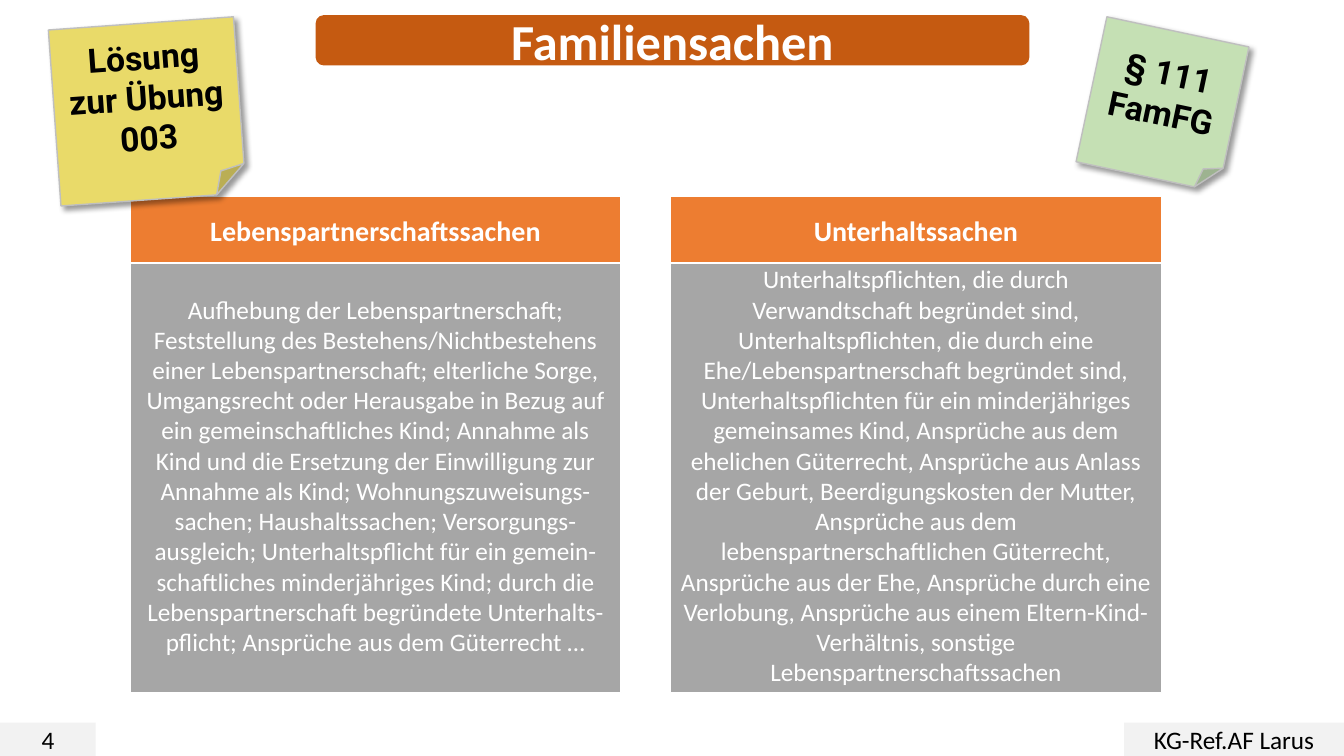
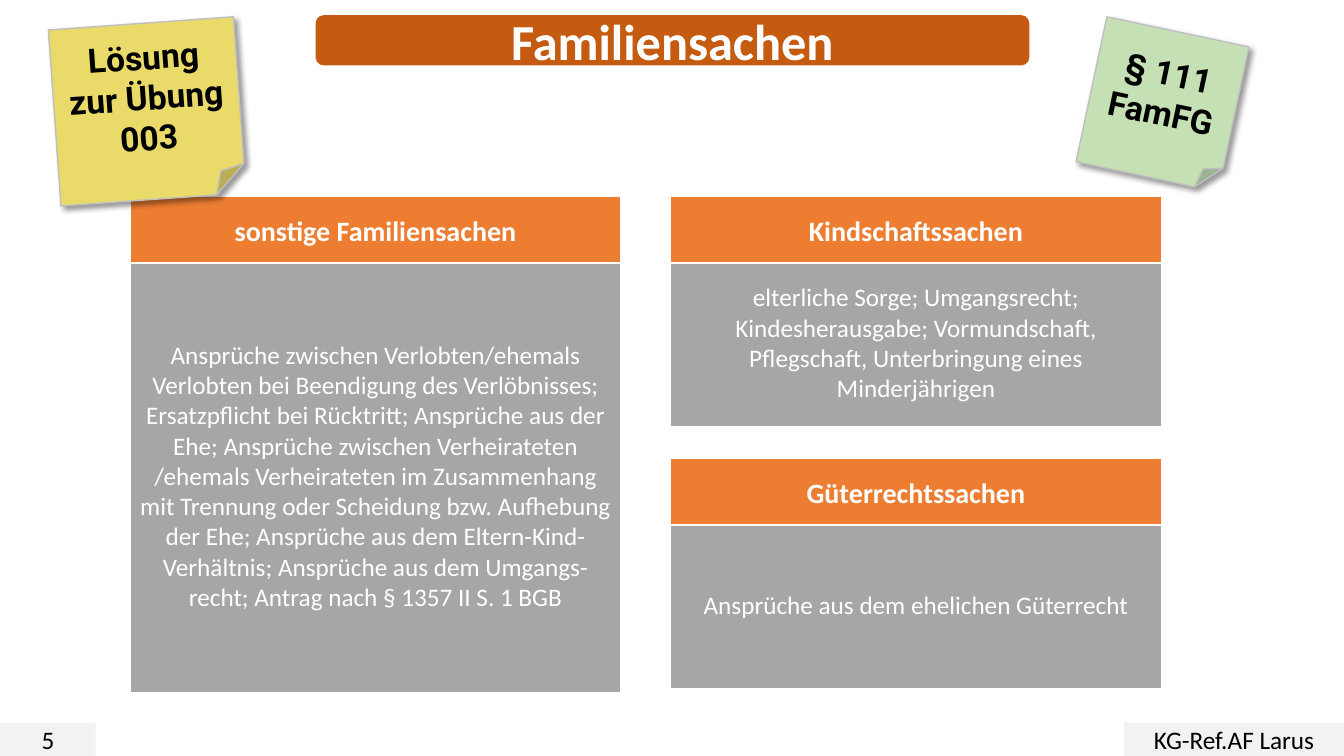
from dataclasses import dataclass

from lxml import etree
from pptx import Presentation
from pptx.dml.color import RGBColor
from pptx.enum.shapes import MSO_SHAPE
from pptx.enum.text import MSO_ANCHOR, PP_ALIGN
from pptx.oxml.ns import qn
from pptx.util import Inches, Pt

RECT = MSO_SHAPE.RECTANGLE
ROUND = MSO_SHAPE.ROUNDED_RECTANGLE
FOLD = MSO_SHAPE.FOLDED_CORNER
MIDDLE = MSO_ANCHOR.MIDDLE
CENTER = PP_ALIGN.CENTER

COLORS = {
    "title": "C55A11",
    "head": "ED7D31",
    "body": "A6A6A6",
    "foot": "F2F2F2",
    "yellow": "E9DA69",
    "green": "C5E0B4",
    "edge": "BFBFBF",
    "white": "FFFFFF",
    "black": "000000",
}


@dataclass(frozen=True)
class Style:
    kind: int
    color: str
    font: dict
    line: str | None = None
    shadow: bool = False


@dataclass(frozen=True)
class Box:
    left: float
    top: float
    width: float
    height: float
    angle: float = 0


@dataclass(frozen=True)
class Panel:
    left: float
    top: float
    height: float
    head: str
    body: str


def font(size: int, ink: str, bold: bool = False, name: str = "Calibri") -> dict:
    return {"size": Pt(size), "bold": bold, "name": name, "ink": ink}


NOTE = font(24, "black", True, "Roboto")
STYLES = {
    "title": Style(ROUND, "title", font(36, "white", True)),
    "foot": Style(RECT, "foot", font(18, "black")),
    "head": Style(RECT, "head", font(20, "white", True), "white"),
    "body": Style(RECT, "body", font(18, "white"), "white"),
    "yellow": Style(FOLD, "yellow", NOTE, "edge", True),
    "green": Style(FOLD, "green", NOTE, "edge", True),
}

# Panel grid
WIDTH, HEAD, STEP = 4.87, 0.66, 0.61
LEFT, RIGHT = 1.29, 6.65
TOP, LOWER = 1.95, 4.55
TALL, SHORT = 4.31, 1.67

PAGES = {
    4: [
        Panel(
            LEFT, TOP, TALL, "Lebenspartnerschaftssachen",
            "Aufhebung der Lebenspartnerschaft; Feststellung des "
            "Bestehens/Nichtbestehens einer Lebenspartnerschaft; elterliche "
            "Sorge, Umgangsrecht oder Herausgabe in Bezug auf ein "
            "gemeinschaftliches Kind; Annahme als Kind und die Ersetzung der "
            "Einwilligung zur Annahme als Kind; Wohnungszuweisungs-sachen; "
            "Haushaltssachen; Versorgungs-ausgleich; Unterhaltspflicht für ein "
            "gemein-schaftliches minderjähriges Kind; durch die "
            "Lebenspartnerschaft begründete Unterhalts-pflicht; Ansprüche aus "
            "dem Güterrecht …",
        ),
        Panel(
            RIGHT, TOP, TALL, "Unterhaltssachen",
            "Unterhaltspflichten, die durch Verwandtschaft begründet sind, "
            "Unterhaltspflichten, die durch eine Ehe/Lebenspartnerschaft "
            "begründet sind, Unterhaltspflichten für ein minderjähriges "
            "gemeinsames Kind, Ansprüche aus dem ehelichen Güterrecht, "
            "Ansprüche aus Anlass der Geburt, Beerdigungskosten der Mutter, "
            "Ansprüche aus dem lebenspartnerschaftlichen Güterrecht, Ansprüche "
            "aus der Ehe, Ansprüche durch eine Verlobung, Ansprüche aus einem "
            "Eltern-Kind-Verhältnis, sonstige Lebenspartnerschaftssachen",
        ),
    ],
    5: [
        Panel(
            LEFT, TOP, TALL, "sonstige Familiensachen",
            "Ansprüche zwischen Verlobten/ehemals Verlobten bei Beendigung des "
            "Verlöbnisses; Ersatzpflicht bei Rücktritt; Ansprüche aus der Ehe; "
            "Ansprüche zwischen Verheirateten /ehemals Verheirateten im "
            "Zusammenhang mit Trennung oder Scheidung bzw. Aufhebung der Ehe; "
            "Ansprüche aus dem Eltern-Kind-Verhältnis; Ansprüche aus dem "
            "Umgangs-recht; Antrag nach § 1357 II S. 1 BGB",
        ),
        Panel(
            RIGHT, TOP, SHORT, "Kindschaftssachen",
            "elterliche Sorge; Umgangsrecht; Kindesherausgabe; Vormundschaft, "
            "Pflegschaft, Unterbringung eines Minderjährigen",
        ),
        Panel(
            RIGHT, LOWER, SHORT, "Güterrechtssachen",
            "Ansprüche aus dem ehelichen Güterrecht",
        ),
    ],
}


def rgb(name: str) -> RGBColor:
    return RGBColor.from_string(COLORS[name])


def shade(shape) -> None:
    """Cast a soft shadow to the lower right."""
    effects = shape._element.spPr.find(qn("a:effectLst"))
    outer = etree.SubElement(
        effects, qn("a:outerShdw"), blurRad=str(Pt(4)), dist=str(Pt(3)),
        dir=str(45 * 60000), algn="tl", rotWithShape="0",
    )
    tint = etree.SubElement(outer, qn("a:srgbClr"), val=COLORS["black"])
    etree.SubElement(tint, qn("a:alpha"), val="40000")


def draw(slide, box: Box, look: str, text: str) -> None:
    style = STYLES[look]
    sides = (box.left, box.top, box.width, box.height)
    shape = slide.shapes.add_shape(style.kind, *map(Inches, sides))
    shape.rotation = box.angle
    shape.fill.solid()
    shape.fill.fore_color.rgb = rgb(style.color)
    if style.line:
        shape.line.color.rgb = rgb(style.line)
        shape.line.width = Pt(1)
    else:
        shape.line.fill.background()
    shape.shadow.inherit = False
    if style.shadow:
        shade(shape)

    # Text
    frame = shape.text_frame
    frame.word_wrap = True
    frame.vertical_anchor = MIDDLE
    para = frame.paragraphs[0]
    para.alignment = CENTER
    run = para.add_run()
    run.text = text
    for key, value in style.font.items():
        if key == "ink":
            run.font.color.rgb = rgb(value)
        else:
            setattr(run.font, key, value)


def build(deck, page: int, panels: list[Panel]) -> None:
    slide = deck.slides.add_slide(deck.slide_layouts[6])

    # Title, footer and statute note
    draw(slide, Box(3.13, 0.15, 7.08, 0.5), "title", "Familiensachen")
    draw(slide, Box(0, 7.17, 0.95, 0.33), "foot", str(page))
    draw(slide, Box(11.15, 7.17, 2.18, 0.33), "foot", "KG-Ref.AF Larus")
    draw(slide, Box(10.81, 0.3, 1.44, 1.47, 12), "green", "§ 111 FamFG")

    # Panels: each heading overlaps the top of its body
    for item in panels:
        body = Box(item.left, item.top + STEP, WIDTH, item.height)
        draw(slide, body, "body", item.body)
        draw(slide, Box(item.left, item.top, WIDTH, HEAD), "head", item.head)

    # Exercise note lies over the first heading
    draw(slide, Box(0.54, 0.23, 1.84, 1.75, 355.9), "yellow",
         "Lösung zur Übung 003")


def main() -> None:
    deck = Presentation()
    deck.slide_width = Inches(13.33)
    deck.slide_height = Inches(7.5)
    for page, panels in PAGES.items():
        build(deck, page, panels)
    deck.save("out.pptx")


if __name__ == "__main__":
    main()
